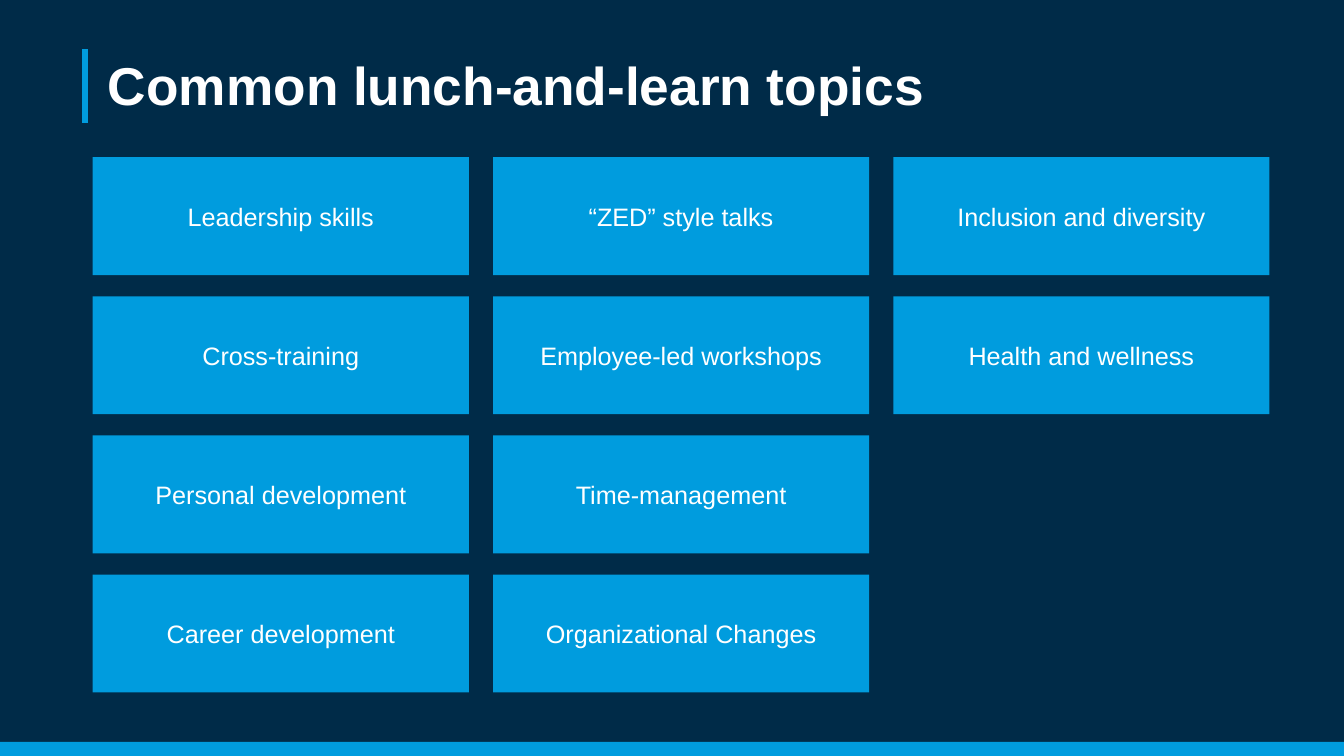
from pptx import Presentation
from pptx.dml.color import RGBColor
from pptx.enum.shapes import MSO_CONNECTOR, MSO_SHAPE
from pptx.enum.text import MSO_ANCHOR, PP_ALIGN
from pptx.oxml.ns import qn
from pptx.util import Inches, Pt
from lxml import etree

NAVY, BLUE, WHITE = "002B48", "009CDE", "FFFFFF"
TOPICS = [
    ["Leadership skills", "Cross-training", "Personal development", "Career development"],
    ["“ZED” style talks", "Employee-led workshops", "Time-management", "Organizational Changes"],
    ["Inclusion and diversity", "Health and wellness"],
]


def paint(item, color):
    """Give a fill or a line one solid colour."""
    item.fill.solid()
    item.fill.fore_color.rgb = RGBColor.from_string(color)


def add_block(left, top, width, height, color):
    block = slide.shapes.add_shape(
        MSO_SHAPE.RECTANGLE, Inches(left), Inches(top), Inches(width), Inches(height))
    block.shadow.inherit = False
    paint(block, color)
    block.line.fill.background()
    return block


deck = Presentation()
deck.slide_width, deck.slide_height = Inches(13.33), Inches(7.5)
slide = deck.slides.add_slide(deck.slide_layouts[6])
paint(slide.background, NAVY)

# Accent line and footer band
accent = slide.shapes.add_connector(
    MSO_CONNECTOR.STRAIGHT, Inches(0.84), Inches(0.49), Inches(0.84), Inches(1.22))
paint(accent.line, BLUE)
accent.line.width = Pt(4.5)
etree.SubElement(accent.element.spPr, qn("a:effectLst"))
add_block(0, 7.36, 13.33, 0.14, BLUE)

# Title
title = slide.shapes.add_textbox(Inches(1.07), Inches(0.62), Inches(11.35), Inches(1.11))
frame = title.text_frame
frame.word_wrap = True
frame.margin_left = frame.margin_right = frame.margin_top = frame.margin_bottom = 0
frame.text = "Common lunch-and-learn topics"
head = frame.paragraphs[0]
head.line_spacing = Pt(38)
font = head.runs[0].font
font.name, font.size, font.bold = "Arial", Pt(38), True
paint(font, WHITE)

# Topic grid, filled column by column
for col, names in enumerate(TOPICS):
    for row, name in enumerate(names):
        card = add_block(0.92 + col * 3.97, 1.56 + row * 1.38, 3.73, 1.17, BLUE)
        frame = card.text_frame
        frame.word_wrap = True
        frame.vertical_anchor = MSO_ANCHOR.MIDDLE
        frame.text = name
        label = frame.paragraphs[0]
        label.alignment = PP_ALIGN.CENTER
        font = label.runs[0].font
        font.name, font.size = "Arial", Pt(18)
        paint(font, WHITE)

deck.save("out.pptx")
